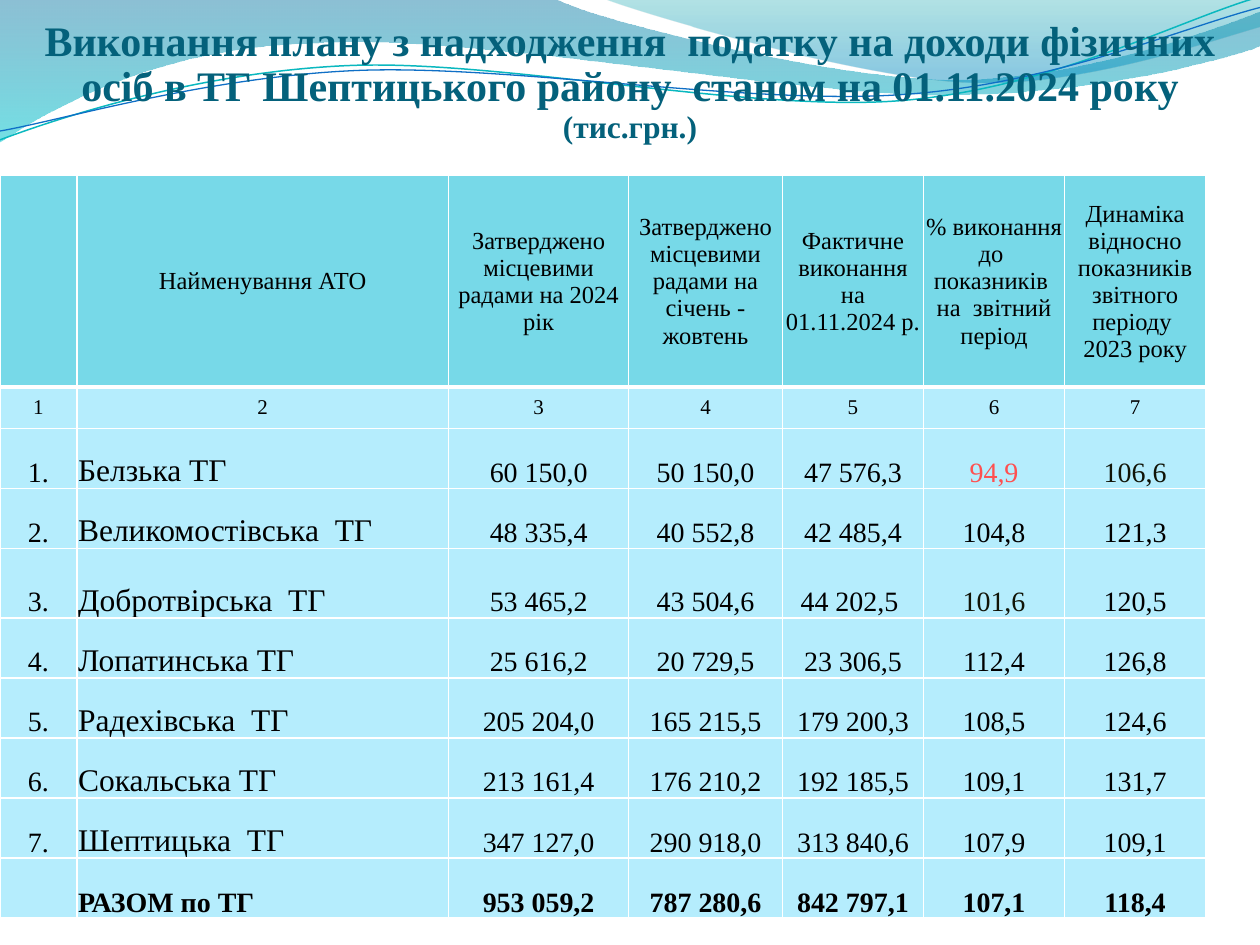
from math import cos, radians, sin

from lxml.etree import SubElement
from pptx import Presentation
from pptx.dml.color import RGBColor
from pptx.enum.text import MSO_ANCHOR, MSO_AUTO_SIZE, PP_ALIGN
from pptx.oxml.ns import qn
from pptx.util import Inches, Pt

FONT = "Times New Roman"
WHITE = RGBColor(0xFF, 0xFF, 0xFF)
BLACK = RGBColor(0, 0, 0)
TITLE_BLUE = RGBColor(0x04, 0x61, 0x7B)
HEADER_FILL = RGBColor(0x77, 0xD9, 0xE8)
BODY_FILL = RGBColor(0xB5, 0xED, 0xFD)
BELOW_PLAN = RGBColor(0xFF, 0x50, 0x50)
DARK_GREEN = RGBColor(0x11, 0x14, 0x07)
TEAL_LINE = RGBColor(0x0A, 0xB8, 0xBF)
BLUE_LINE = RGBColor(0x0F, 0x6F, 0xC6)
WAVE_BLUE = RGBColor(0x00, 0x74, 0xA1)
WAVE_CYAN = RGBColor(0x00, 0xC6, 0xCF)
CREST_TEAL = RGBColor(0x00, 0xA1, 0xA9)
CREST_BLUE = RGBColor(0x00, 0x8B, 0xBF)

LEFT_WAVE = [
    [(-0.01, 0)], [(4.4, -0.01)],
    [(4.76, 0.17), (6.64, 0.63), (7.58, 0.63)],
    [(8.53, 0.63), (9.58, 0.26), (10, 0.09)],
    [(10.01, 0.36)],
    [(9.83, 0.44), (8.7, 0.76), (7.46, 0.75)],
    [(6.22, 0.75), (3.82, 0.28), (2.57, 0.34)],
    [(1.29, 0.36), (0.46, 0.83), (-0.01, 1.13)],
]
RIGHT_CREST = [
    [(4.79, -0.01)],
    [(5.09, 0.11), (6.82, 0.62), (7.69, 0.65)],
    [(8.56, 0.69), (9.61, 0.32), (10, 0.21)],
    [(10, 0)],
]
TEAL_CURVE = [
    [(0, 1.11)],
    [(0.48, 0.93), (1.58, 0.57), (2.77, 0.52)],
    [(3.95, 0.47), (5.93, 0.89), (7.13, 0.8)],
    [(8.33, 0.71), (9.38, 0.15), (9.98, -0.02)],
]
BLUE_CURVE = [
    [(0, 1.04)],
    [(0.47, 0.96), (1.64, 0.61), (2.83, 0.56)],
    [(4.03, 0.51), (5.97, 0.84), (7.17, 0.75)],
    [(8.36, 0.67), (9.41, 0.21), (10, 0.06)],
]
CURVE_TILT = -2.7

COLUMN_WIDTHS = [0.61, 2.95, 1.43, 1.22, 1.12, 1.12, 1.12]
TABLE_HEIGHT = 5.9
TALL_ROWS = {0: 1.68, 1: 0.33, 4: 0.55}
ROWS = [
    ["", "Найменування АТО", "Затверджено місцевими радами на 2024 рік",
     "Затверджено місцевими радами на січень - жовтень",
     "Фактичне виконання на 01.11.2024 р. ",
     "% виконання до  показників  на  звітний період",
     "Динаміка відносно показників звітного періоду  2023 року"],
    ["1", "2", "3", "4", "5", "6", "7"],
    ["1.", "Белзька ТГ", "60 150,0", "50 150,0", "47 576,3", "94,9", "106,6"],
    ["2.", "Великомостівська  ТГ", "48 335,4", "40 552,8", "42 485,4", "104,8", "121,3"],
    ["3.", "Добротвірська  ТГ", "53 465,2", "43 504,6", "44 202,5 ", "101,6", "120,5"],
    ["4.", "Лопатинська ТГ", "25 616,2", "20 729,5", "23 306,5", "112,4", "126,8"],
    ["5.", "Радехівська  ТГ", "205 204,0", "165 215,5", "179 200,3", "108,5", "124,6"],
    ["6.", "Сокальська ТГ", "213 161,4", "176 210,2", "192 185,5", "109,1", "131,7"],
    ["7.", "Шептицька  ТГ", "347 127,0", "290 918,0", "313 840,6", "107,9", "109,1"],
    ["", "РАЗОМ по ТГ", "953 059,2", "787 280,6", "842 797,1", "107,1", "118,4"],
]
HEADER, NUMBERING, TOTAL = 0, 1, len(ROWS) - 1
ACCENTS = {(2, 5): BELOW_PLAN, (2, 6): DARK_GREEN, (4, 5): DARK_GREEN}


def add_outline(slide, segments, close):
    points = [(Inches(x), Inches(y)) for segment in segments for x, y in segment]
    builder = slide.shapes.build_freeform(*points[0])
    builder.add_line_segments(points[1:], close=close)
    outline = builder.convert_to_shape()
    outline.shadow.inherit = False
    route = next(outline._element.iter(qn("a:path")))
    lines = iter(route.findall(qn("a:lnTo")))
    for segment in segments[1:]:
        steps = [next(lines) for _ in segment]
        if len(steps) == 3:
            bezier = SubElement(route, qn("a:cubicBezTo"))
            route.replace(steps[0], bezier)
            for step in steps:
                bezier.append(step[0])
            for step in steps[1:]:
                route.remove(step)
    return outline


def add_wave(slide, segments, stops):
    wave = add_outline(slide, segments, True)
    wave.line.fill.background()
    wave.fill.gradient()
    wave.fill.gradient_angle = 270
    for stop, (position, color, opacity) in zip(wave.fill.gradient_stops, stops):
        stop.position = position
        stop.color.rgb = color
    colors = wave._element.spPr.iter(qn("a:srgbClr"))
    for color_element, (_, _, opacity) in zip(colors, stops):
        SubElement(color_element, qn("a:alpha"), val=str(opacity * 1000))


def turn(point, center, degrees):
    dx, dy = point[0] - center[0], point[1] - center[1]
    c, s = cos(radians(degrees)), sin(radians(degrees))
    return center[0] + dx * c - dy * s, center[1] + dx * s + dy * c


def add_curve(slide, segments, center, color, width):
    level = [[turn(point, center, -CURVE_TILT) for point in segment] for segment in segments]
    curve = add_outline(slide, level, False)
    curve.rotation = CURVE_TILT
    curve.fill.background()
    curve.line.color.rgb = color
    curve.line.width = Pt(width)


def fill_title(slide):
    title = slide.shapes.title
    slide.shapes._spTree.append(title._element)
    title.left, title.top = Inches(0), Inches(0)
    title.width, title.height = Inches(10), Inches(1.31)
    frame = title.text_frame
    frame.word_wrap = True
    frame.auto_size = MSO_AUTO_SIZE.NONE
    frame.vertical_anchor = MSO_ANCHOR.MIDDLE
    heading = frame.paragraphs[0]
    heading.alignment = PP_ALIGN.CENTER
    heading.line_spacing = 0.9
    for text, size in [
        ("Виконання плану з надходження  податку на доходи фізичних осіб "
         "в ТГ Шептицького району  станом на 01.11.2024 року ", 24),
        ("(тис.грн.)", 18),
    ]:
        run = heading.add_run()
        run.text = text
        run.font.name = FONT
        run.font.size = Pt(size)
        run.font.bold = True
        run.font.color.rgb = TITLE_BLUE


def set_borders(cell, widths):
    properties = cell._tc.get_or_add_tcPr()
    for side, width in widths.items():
        border = SubElement(properties, qn(f"a:ln{side}"), w=str(Pt(width)))
        solid = SubElement(border, qn("a:solidFill"))
        SubElement(solid, qn("a:srgbClr"), val=str(WHITE))


def text_size(row, column):
    if row == HEADER:
        return 14
    if row == NUMBERING:
        return 12
    return 18 if column == 1 and row != TOTAL else 16


def format_cell(cell, row, column, text):
    top, bottom = 3 if row == NUMBERING else 1, 3 if row == HEADER else 1
    set_borders(cell, {"L": 1, "R": 1, "T": top, "B": bottom})
    cell.fill.solid()
    cell.fill.fore_color.rgb = HEADER_FILL if row == HEADER else BODY_FILL
    if not text:
        return
    cell.vertical_anchor = MSO_ANCHOR.BOTTOM if row > NUMBERING else MSO_ANCHOR.MIDDLE
    if row != NUMBERING:
        cell.margin_left = cell.margin_right = cell.margin_top = Inches(0.01)
        cell.margin_bottom = 0
    cell.text = text
    paragraph = cell.text_frame.paragraphs[0]
    is_name = column == 1 and row > NUMBERING
    paragraph.alignment = PP_ALIGN.LEFT if is_name else PP_ALIGN.CENTER
    paragraph.font.name = FONT
    paragraph.font.size = Pt(text_size(row, column))
    paragraph.font.bold = row == TOTAL
    paragraph.font.color.rgb = ACCENTS.get((row, column), BLACK)


def add_revenue_table(slide):
    table = slide.shapes.add_table(
        len(ROWS), len(COLUMN_WIDTHS), Inches(0), Inches(1.39),
        Inches(sum(COLUMN_WIDTHS)), Inches(TABLE_HEIGHT)).table
    table.first_row = table.horz_banding = False
    for column, width in zip(table.columns, COLUMN_WIDTHS):
        column.width = Inches(width)
    plain_height = (TABLE_HEIGHT - sum(TALL_ROWS.values())) / (len(ROWS) - len(TALL_ROWS))
    for r, texts in enumerate(ROWS):
        table.rows[r].height = Inches(TALL_ROWS.get(r, plain_height))
        for c, text in enumerate(texts):
            format_cell(table.cell(r, c), r, c, text)


def main():
    deck = Presentation()
    deck.slide_width, deck.slide_height = Inches(10), Inches(7.5)
    slide = deck.slides.add_slide(deck.slide_layouts[5])
    add_wave(slide, LEFT_WAVE, [(0, WAVE_BLUE, 45), (1, WAVE_CYAN, 55)])
    add_wave(slide, RIGHT_CREST, [(0, CREST_TEAL, 30), (0.8, CREST_BLUE, 45)])
    add_curve(slide, TEAL_CURVE, (4.99, 0.58), TEAL_LINE, 0.85)
    add_curve(slide, BLUE_CURVE, (5, 0.59), BLUE_LINE, 0.75)
    fill_title(slide)
    add_revenue_table(slide)
    deck.save("out.pptx")


if __name__ == "__main__":
    main()
